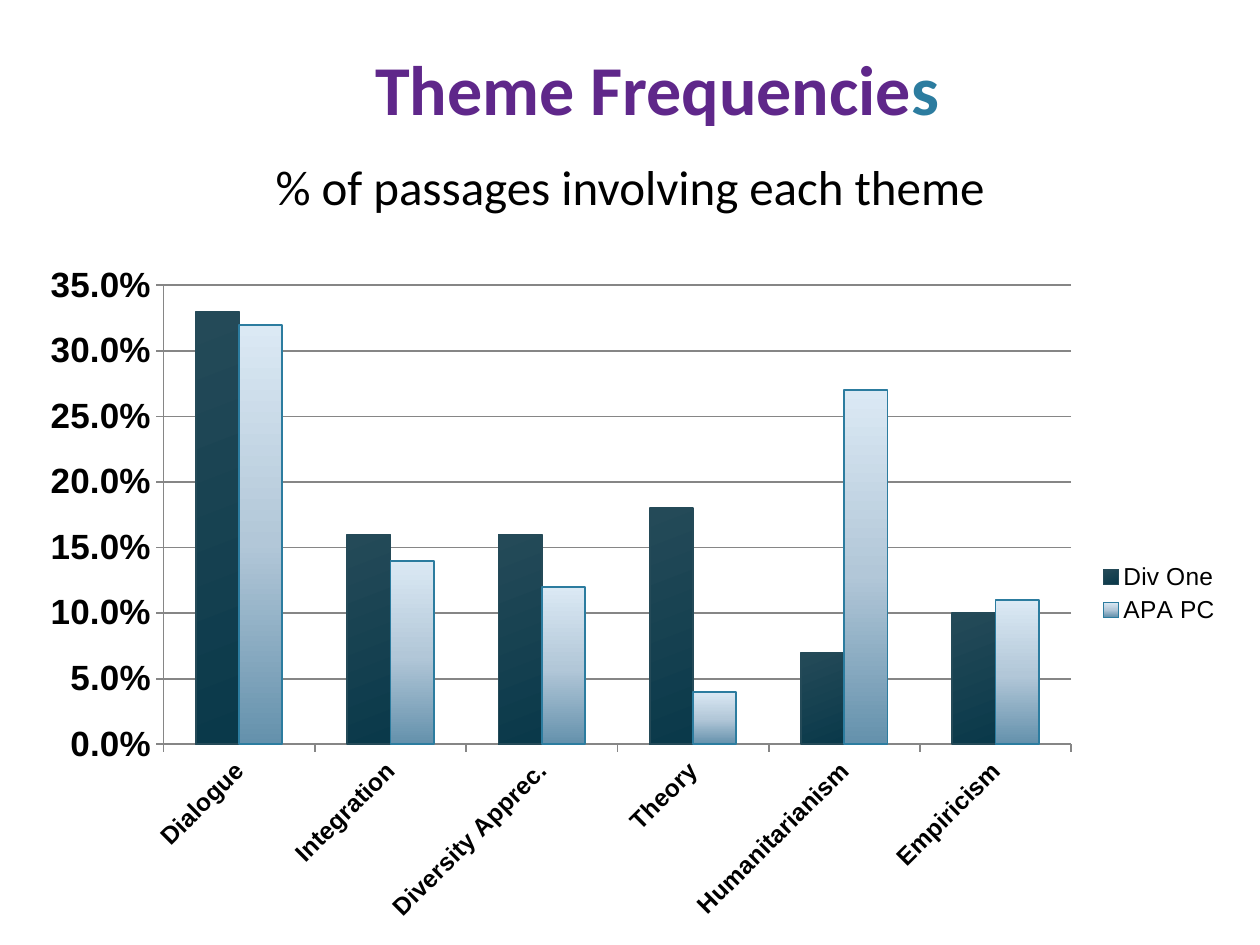
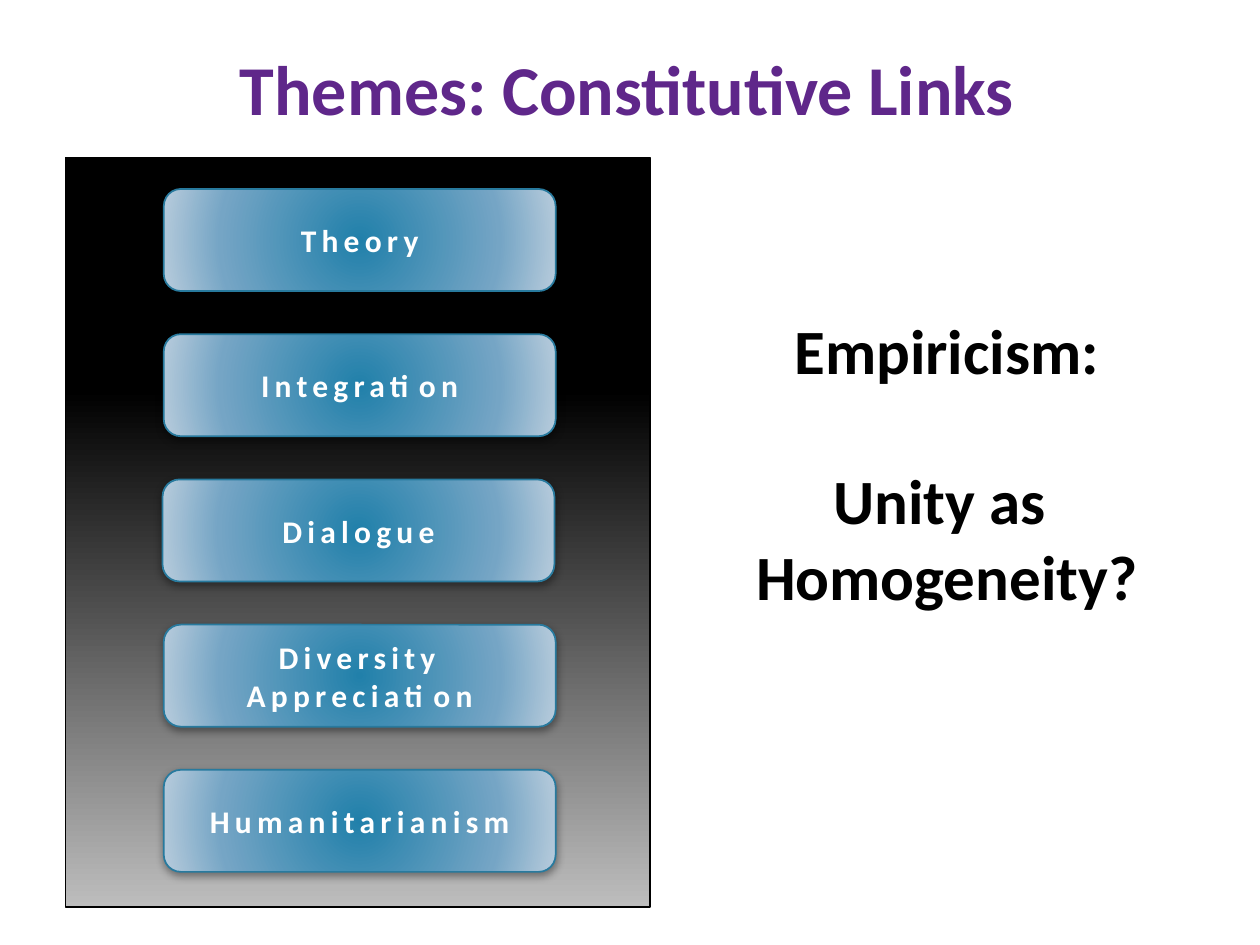
import lxml.etree
import pptx
import pptx.chart.data
import pptx.dml.color
import pptx.enum.chart
import pptx.enum.shapes
import pptx.enum.text
import pptx.oxml
import pptx.oxml.ns
import pptx.util

Inches = pptx.util.Inches
Pt = pptx.util.Pt
qn = pptx.oxml.ns.qn
rgb = pptx.dml.color.RGBColor.from_string
ANCHOR = pptx.enum.text.MSO_ANCHOR
CENTER = pptx.enum.text.PP_ALIGN.CENTER
SHAPE = pptx.enum.shapes.MSO_SHAPE

COLORS = {
    "purple": "5F278A", "teal": "2C7C9F", "black": "000000", "white": "FFFFFF",
    "dark": "244A58", "grid": "868686", "edge": "287A9E",
}
GRADIENTS = {
    "dark bar": [(0, "244A58"), (100, "0A394A")],
    "light bar": [(0, "6491AC"), (48, "B2C7D8"), (100, "DBE9F4")],
    "panel": [(31, "000000"), (100, "BDBDBD")],
    "theme": [(0, "2180AA"), (69, "75A5C5"), (100, "B8CCDC")],
}
NAMESPACE = pptx.oxml.ns.nsdecls("a")


def write(para, text, size=18, color="black", bold=False, spacing=None):
    """Add a centred span of text to a paragraph."""
    para.alignment = CENTER
    span = para.add_run()
    span.text = text
    span.font.name = "Calibri"
    span.font.size = Pt(size)
    span.font.bold = bold
    span.font.color.rgb = rgb(COLORS[color])
    if spacing:
        span.font._element.set("spc", str(spacing * 100))


def fill_gradient(owner, properties, name, angle=None):
    """Fill with a linear gradient, or a circular one when no angle is given."""
    owner.fill.solid()
    stops = "".join(
        f'<a:gs pos="{place * 1000}"><a:srgbClr val="{color}"/></a:gs>'
        for place, color in GRADIENTS[name])
    if angle is None:
        course = ('<a:path path="circle"><a:fillToRect l="100000" t="100000" '
                  'r="100000" b="100000"/></a:path>')
    else:
        course = f'<a:lin ang="{angle * 60000}" scaled="0"/>'
    solid = properties.find(qn("a:solidFill"))
    properties.replace(solid, pptx.oxml.parse_xml(
        f'<a:gradFill {NAMESPACE} rotWithShape="1"><a:gsLst>{stops}</a:gsLst>{course}</a:gradFill>'))


deck = pptx.Presentation()
deck.slide_width = Inches(10)
deck.slide_height = Inches(7.5)

# Pages and their titles
pages = []
for left, title_parts in [
    (0.68, [("Theme Frequencie", "purple"), ("s", "teal")]),
    (0.44, [("Themes: Constitutive Links", "purple")]),
]:
    page = deck.slides.add_slide(deck.slide_layouts[5])
    title = page.shapes.title
    title.left, title.top = Inches(left), Inches(0.08)
    title.width, title.height = Inches(9.07), Inches(1)
    title.text_frame.vertical_anchor = ANCHOR.BOTTOM
    for text, color in title_parts:
        write(title.text_frame.paragraphs[0], text, size=40, color=color, bold=True)
    pages.append(page)
frequency_page, links_page = pages

# Slide 1: chart
chart_data = pptx.chart.data.CategoryChartData(number_format="0.0%")
chart_data.categories = ["Dialogue", "Integration", "Diversity Apprec.",
                         "Theory", "Humanitarianism", "Empiricism"]
chart_data.add_series("Div One", [0.33, 0.16, 0.16, 0.18, 0.07, 0.1])
chart_data.add_series("APA PC", [0.32, 0.14, 0.12, 0.04, 0.27, 0.11])
chart = frequency_page.shapes.add_chart(
    pptx.enum.chart.XL_CHART_TYPE.COLUMN_CLUSTERED,
    Inches(0.21), Inches(2), Inches(9.58), Inches(5.42), chart_data).chart
chart.has_title = False
chart.font.name = "Arial"
chart.font.size = Pt(14)
chart.font.color.rgb = rgb(COLORS["black"])
chart.has_legend = True
chart.legend.position = pptx.enum.chart.XL_LEGEND_POSITION.RIGHT
chart.legend.include_in_layout = False
plot = chart.plots[0]
plot.gap_width = 150
plot.overlap = 0
plot.vary_by_categories = False

# Bars
for series, name, angle, line_color in zip(
        plot.series, ["dark bar", "light bar"], [69, 270], ["dark", "teal"]):
    series.invert_if_negative = False
    series.format.line.color.rgb = rgb(COLORS[line_color])
    series.format.line.width = Pt(1)
    fill_gradient(series.format, series._element.find(qn("c:spPr")), name, angle)

# Axes
for axis, size in [(chart.category_axis, 14), (chart.value_axis, 20)]:
    labels = axis.tick_labels
    labels.font.name = "Arial"
    labels.font.size = Pt(size)
    labels.font.bold = True
    labels.font.color.rgb = rgb(COLORS["black"])
    axis.major_tick_mark = pptx.enum.chart.XL_TICK_MARK.OUTSIDE
    axis.format.line.color.rgb = rgb(COLORS["grid"])
    axis.format.line.width = Pt(1)
label_body = chart.category_axis._element.find(qn("c:txPr")).find(qn("a:bodyPr"))
label_body.set("rot", str(-45 * 60000))
value_axis = chart.value_axis
value_axis.minimum_scale = 0
value_axis.maximum_scale = 0.35
value_axis.major_unit = 0.05
value_axis.tick_labels.number_format = "0.0%"
value_axis.tick_labels.number_format_is_linked = False
value_axis.has_major_gridlines = True
value_axis.major_gridlines.format.line.color.rgb = rgb(COLORS["grid"])
value_axis.major_gridlines.format.line.width = Pt(1)

# Subtitle
subtitle = frequency_page.shapes.add_textbox(
    Inches(0.21), Inches(1.08), Inches(9.58), Inches(0.68)).text_frame
subtitle.word_wrap = True
subtitle.vertical_anchor = ANCHOR.BOTTOM
write(subtitle.paragraphs[0], "% of passages involving each theme", size=28)

# Slide 2: panel behind the themes
panel = links_page.shapes.add_shape(
    SHAPE.RECTANGLE, Inches(0.52), Inches(1.25), Inches(4.64), Inches(5.95))
panel.shadow.inherit = False
panel.line.color.rgb = rgb(COLORS["black"])
panel.line.width = Pt(1)
fill_gradient(panel, panel._element.spPr, "panel", 90)

# Theme boxes, evenly spaced
themes = ["Theory", "Integration", "Dialogue", "Diversity Appreciation", "Humanitarianism"]
first_top, last_top = 1.5, 6.11
step = (last_top - first_top) / (len(themes) - 1)
for row, theme in enumerate(themes):
    left = 1.29 if theme == "Dialogue" else 1.3
    box = links_page.shapes.add_shape(
        SHAPE.ROUNDED_RECTANGLE, Inches(left), Inches(first_top + row * step),
        Inches(3.11), Inches(0.81))
    box.line.color.rgb = rgb(COLORS["edge"])
    box.line.width = Pt(1)
    properties = box._element.spPr
    fill_gradient(box, properties, "theme")
    box.shadow.inherit = False
    properties.find(qn("a:effectLst")).append(pptx.oxml.parse_xml(
        f'<a:outerShdw {NAMESPACE} blurRad="{Pt(5)}" dist="{Pt(2)}" dir="5400000" rotWithShape="0">'
        f'<a:srgbClr val="{COLORS["black"]}"><a:alpha val="40000"/></a:srgbClr></a:outerShdw>'))
    box.text_frame.word_wrap = True
    box.text_frame.vertical_anchor = ANCHOR.MIDDLE
    write(box.text_frame.paragraphs[0], theme, color="white", bold=True, spacing=3)

# Question beside the panel
question = links_page.shapes.add_textbox(
    Inches(5.78), Inches(2.42), Inches(3.47), Inches(3.13)).text_frame
question.word_wrap = True
write(question.paragraphs[0], "Empiricism:", size=36, bold=True)
for text, gap in [("Unity as ", 43), ("Homogeneity?", 0)]:
    para = question.add_paragraph()
    para.space_before = Pt(gap)
    write(para, text, size=36, bold=True)

deck.save("out.pptx")
